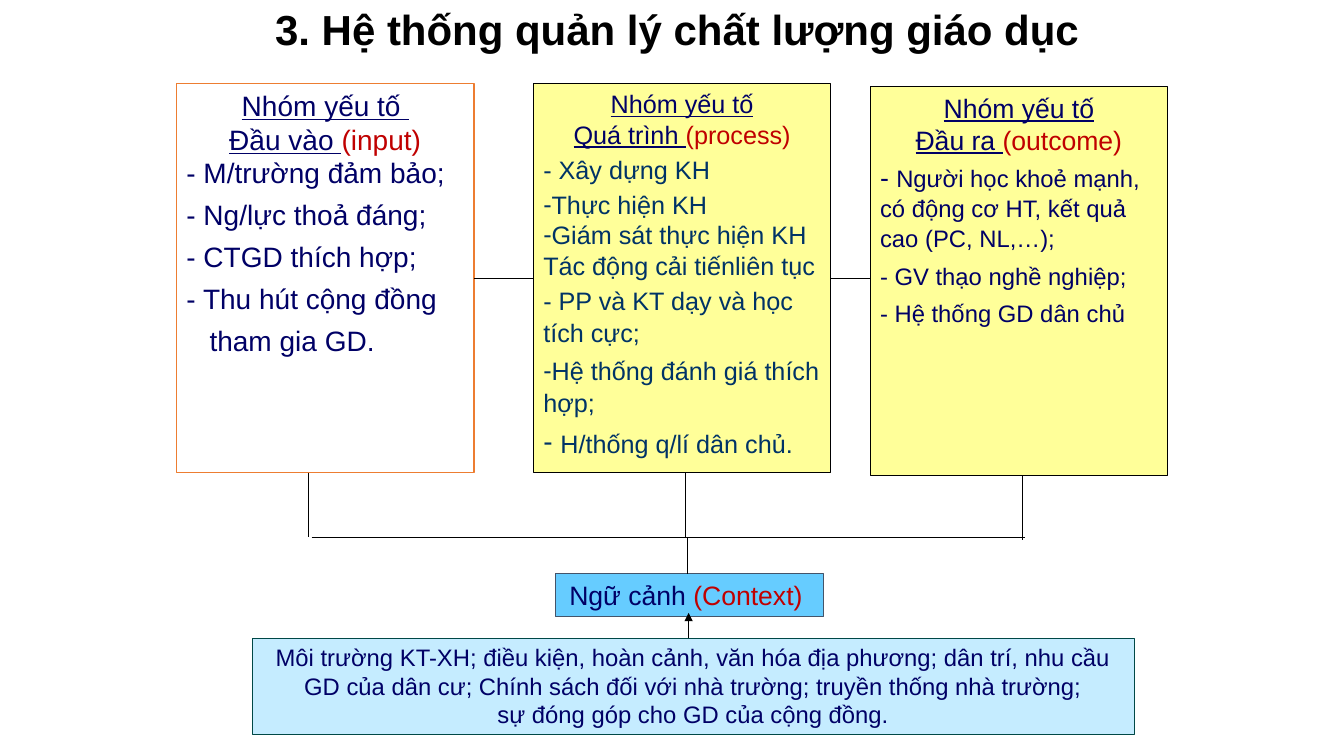
from lxml import etree
from pptx import Presentation
from pptx.dml.color import RGBColor
from pptx.enum.shapes import MSO_CONNECTOR, MSO_SHAPE
from pptx.enum.text import MSO_ANCHOR, MSO_AUTO_SIZE, PP_ALIGN
from pptx.oxml.ns import qn
from pptx.util import Inches, Pt

CENTER = PP_ALIGN.CENTER
LEFT = PP_ALIGN.LEFT
TOP = MSO_ANCHOR.TOP
MIDDLE = MSO_ANCHOR.MIDDLE
NO_FIT = MSO_AUTO_SIZE.NONE
RECTANGLE = MSO_SHAPE.RECTANGLE
STRAIGHT = MSO_CONNECTOR.STRAIGHT

FONT = "Arial"
BLACK = "000000"
NAVY = "000066"
TEAL = "003366"
RED = "C00000"
YELLOW = "FFFF99"

BOX_WIDTH, BOX_HEIGHT = 2.95, 3.86
INPUT_LEFT, PROCESS_LEFT, OUTCOME_LEFT = 1.75, 5.29, 8.63
BOX_TOP, OUTCOME_TOP = 0.83, 0.86
LINK_Y, BUS_Y = 2.76, 5.33


def color(value):
    return RGBColor.from_string(value)


def add_run(paragraph, text, size=18, ink=NAVY, bold=False, underline=False):
    run = paragraph.add_run()
    run.text = text
    font = run.font
    font.name, font.size, font.bold, font.underline = FONT, Pt(size), bold, underline
    font.color.rgb = color(ink)


def add_paragraph(frame, runs, align=LEFT, before=0, after=0, spacing=1.0,
                  bullet=None, indent=0):
    first = frame.paragraphs[0]
    paragraph = frame.add_paragraph() if first.runs else first
    paragraph.alignment = align
    paragraph.line_spacing = spacing
    paragraph.space_before, paragraph.space_after = Pt(before), Pt(after)
    properties = paragraph._p.get_or_add_pPr()
    properties.set("marL", str(Inches(indent)))
    properties.set("indent", "0")
    if bullet:
        etree.SubElement(properties, qn("a:buFont")).set("typeface", FONT)
        etree.SubElement(properties, qn("a:buChar")).set("char", bullet)
    for text, run_format in runs:
        add_run(paragraph, text, **run_format)


def add_box(slide, left, top, width, height, fill, line, line_width=0.75, anchor=TOP):
    shape = slide.shapes.add_shape(
        RECTANGLE, Inches(left), Inches(top), Inches(width), Inches(height))
    shape.shadow.inherit = False
    shape.fill.solid()
    shape.fill.fore_color.rgb = color(fill)
    shape.line.color.rgb = color(line)
    shape.line.width = Pt(line_width)
    frame = shape.text_frame
    frame.word_wrap = True
    frame.vertical_anchor = anchor
    return frame


def add_heading(frame, first_line, second_line, english, size):
    heading = {"size": size, "underline": True}
    add_paragraph(frame, [(first_line, heading)], align=CENTER)
    add_paragraph(frame, [(second_line, heading), (english, {"size": size, "ink": RED})],
                  align=CENTER)


def add_line(slide, start_x, start_y, end_x, end_y, arrow=False):
    connector = slide.shapes.add_connector(
        STRAIGHT, Inches(start_x), Inches(start_y), Inches(end_x), Inches(end_y))
    connector.line.color.rgb = color(BLACK)
    connector.line.width = Pt(0.75)
    if arrow:
        line = connector.line._get_or_add_ln()
        etree.SubElement(line, qn("a:tailEnd")).set("type", "triangle")
    etree.SubElement(connector._element.spPr, qn("a:effectLst"))


def set_title(slide, text):
    title = slide.shapes.title
    title.left, title.top = Inches(2.46), Inches(-0.02)
    title.width, title.height = Inches(8.52), Inches(0.6)
    frame = title.text_frame
    frame.word_wrap = True
    frame.auto_size = NO_FIT
    frame.vertical_anchor = MIDDLE
    add_paragraph(frame, [(text, {"size": 30, "ink": BLACK, "bold": True})], align=CENTER)


def add_input_box(slide):
    frame = add_box(slide, INPUT_LEFT, BOX_TOP, BOX_WIDTH, BOX_HEIGHT, "FFFFFF", "ED7D31", 1)
    add_heading(frame, "Nhóm yếu tố ", "Đầu vào ", "(input)", 20)
    for text, indent in [("- M/trường đảm bảo;", 0), ("- Ng/lực thoả đáng;", 0),
                         ("- CTGD thích hợp;", 0), ("- Thu hút cộng đồng", 0),
                         ("tham gia GD.", 0.23)]:
        add_paragraph(frame, [(text, {"size": 20})], after=6, indent=indent)


def add_process_box(slide):
    frame = add_box(slide, PROCESS_LEFT, BOX_TOP, BOX_WIDTH, BOX_HEIGHT, YELLOW, BLACK)
    add_heading(frame, "Nhóm yếu tố", "Quá trình ", "(process)", 18)
    body = {"ink": TEAL}
    loose = {"spacing": 1.05, "before": 2.7, "after": 1.8}
    add_paragraph(frame, [("- Xây dựng KH", body)], before=3.6, after=3.6)
    add_paragraph(frame, [("Thực hiện KH", body)], bullet="-")
    add_paragraph(frame, [("Giám sát thực hiện KH", body)], bullet="-")
    add_paragraph(frame, [("Tác động cải tiếnliên tục", body)])
    add_paragraph(frame, [("- PP và KT dạy và học tích cực;", body)], **loose)
    add_paragraph(frame, [("Hệ thống đánh giá thích hợp;", body)], bullet="-", **loose)
    add_paragraph(frame, [(" ", {"ink": TEAL, "size": 20}), ("H/thống q/lí dân chủ.", body)],
                  bullet="-", **loose)


def add_outcome_box(slide):
    frame = add_box(slide, OUTCOME_LEFT, OUTCOME_TOP, BOX_WIDTH, BOX_HEIGHT, YELLOW, BLACK)
    add_heading(frame, "Nhóm yếu tố", "Đầu ra ", "(outcome)", 19)
    for dash_size, text in [
            (19, "Người học khoẻ mạnh, có động cơ HT, kết quả cao (PC, NL,…);"),
            (17, "GV thạo nghề nghiệp;"),
            (17, "Hệ thống GD dân chủ")]:
        add_paragraph(frame, [("- ", {"size": dash_size}), (text, {"size": 17})],
                      spacing=1.05, before=2.6, after=2.6)


def add_context_boxes(slide):
    frame = add_box(slide, 5.51, 5.69, 2.66, 0.43, "66CCFF", "44546A", anchor=MIDDLE)
    add_paragraph(frame, [("Ngữ cảnh ", {"size": 19}), ("(Context) ", {"size": 19, "ink": RED})],
                  align=CENTER)
    frame = add_box(slide, 2.5, 6.33, 8.75, 0.96, "C5ECFF", "004846")
    for text in [
            "Môi trường KT-XH; điều kiện, hoàn cảnh, văn hóa địa phương; dân trí, nhu cầu "
            "GD của dân cư; Chính sách đối với nhà trường; truyền thống nhà trường;",
            "sự đóng góp cho GD của cộng đồng."]:
        add_paragraph(frame, [(text, {"size": 17})], align=CENTER)


def add_links(slide):
    add_line(slide, INPUT_LEFT + BOX_WIDTH, LINK_Y, PROCESS_LEFT, LINK_Y)
    add_line(slide, PROCESS_LEFT + BOX_WIDTH, LINK_Y, OUTCOME_LEFT, LINK_Y)
    add_line(slide, 3.09, BUS_Y, 10.17, BUS_Y)
    for x, box_top in [(3.06, BOX_TOP), (6.8, BOX_TOP), (10.14, OUTCOME_TOP)]:
        bottom = box_top + BOX_HEIGHT
        add_line(slide, x, bottom, x, bottom + 0.64)
    add_line(slide, 6.82, BUS_Y, 6.82, 5.69)
    add_line(slide, 6.83, 6.33, 6.83, 6.08, arrow=True)


def main():
    presentation = Presentation()
    presentation.slide_width = Inches(13.33)
    presentation.slide_height = Inches(7.5)
    slide = presentation.slides.add_slide(presentation.slide_layouts[5])
    set_title(slide, "3. Hệ thống quản lý chất lượng giáo dục")
    add_input_box(slide)
    add_process_box(slide)
    add_outcome_box(slide)
    add_context_boxes(slide)
    add_links(slide)
    presentation.save("out.pptx")


if __name__ == "__main__":
    main()
